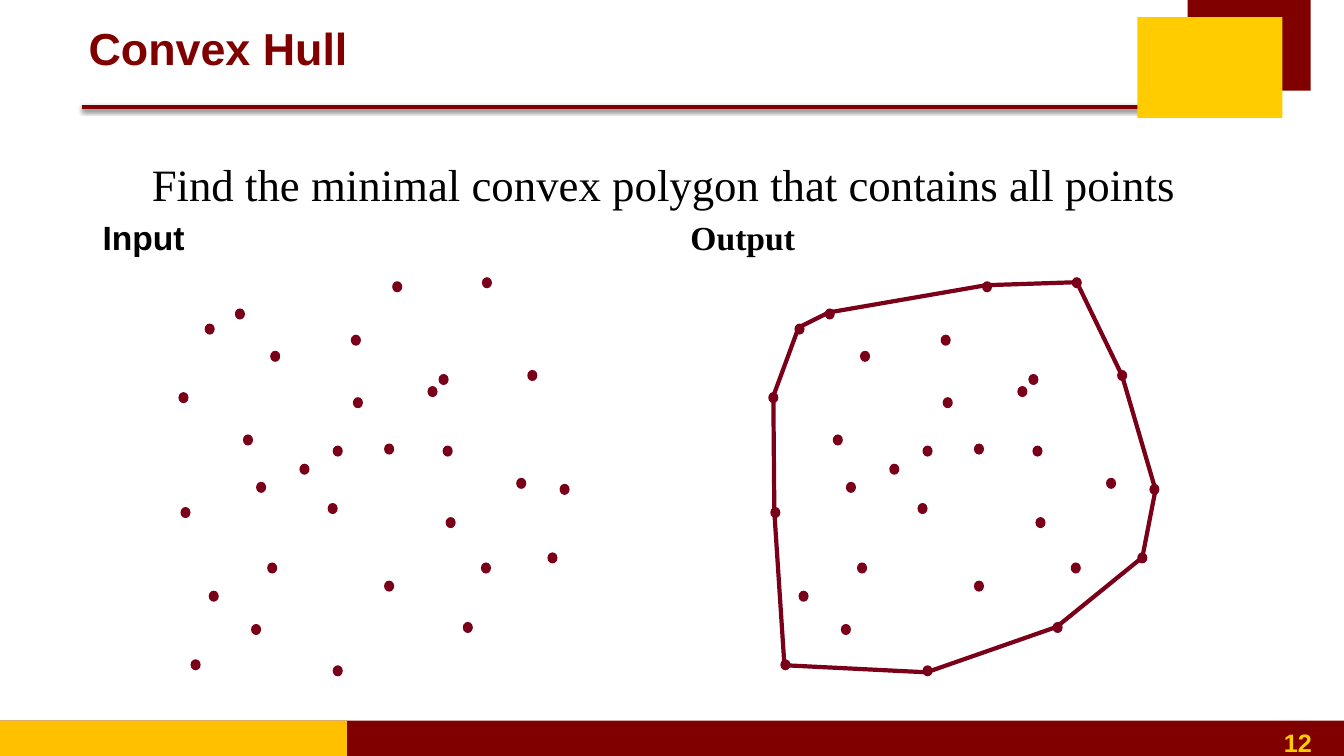
from lxml.etree import SubElement
from pptx import Presentation
from pptx.dml.color import RGBColor
from pptx.enum.shapes import MSO_CONNECTOR, MSO_SHAPE
from pptx.enum.text import MSO_ANCHOR, PP_ALIGN
from pptx.oxml.ns import qn
from pptx.util import Inches, Pt

MAROON, POINT, GOLD = "800000", "7A0019", "FFCC00"
rgb = RGBColor.from_string

prs = Presentation()
prs.slide_width, prs.slide_height = Inches(13.33), Inches(7.5)
s = prs.slides.add_slide(prs.slide_layouts[6])


def add_filled(kind, x, y, w, h, color):
    sp = s.shapes.add_shape(kind, Inches(x), Inches(y), Inches(w), Inches(h))
    sp.shadow.inherit = False
    sp.fill.solid()
    sp.fill.fore_color.rgb = rgb(color)
    sp.line.fill.background()


def add_text(text, x, y, w, h, size, font, color, bold=True,
             align=PP_ALIGN.LEFT, anchor=MSO_ANCHOR.TOP):
    tf = s.shapes.add_textbox(Inches(x), Inches(y), Inches(w), Inches(h)).text_frame
    tf.word_wrap = True
    tf.vertical_anchor = anchor
    p = tf.paragraphs[0]
    p.text = text
    p.alignment = align
    f = p.runs[0].font
    f.size, f.name, f.bold = Pt(size), font, bold
    f.color.rgb = rgb(color)


# Title rule: two stacked lines with a soft shadow below
for color in ("C00000", MAROON):
    rule = s.shapes.add_connector(MSO_CONNECTOR.STRAIGHT, Inches(0.81), Inches(1.06),
                                  Inches(11.37), Inches(1.06))
    rule.line.color.rgb = rgb(color)
    rule.line.width = Pt(3)
    effects = SubElement(rule._element.spPr, qn("a:effectLst"))
    shadow = SubElement(effects, qn("a:outerShdw"), blurRad=str(Pt(3.1)),
                        dist=str(Pt(1.8)), dir="5400000", rotWithShape="0")
    black = SubElement(shadow, qn("a:srgbClr"), val="000000")
    SubElement(black, qn("a:alpha"), val="35000")

# Footer band and corner blocks
for x, y, w, h, color in [
    (0, 7.15, 13.33, 0.35, MAROON),
    (0, 7.15, 3.44, 0.35, "FFC000"),
    (11.78, 0, 1.22, 0.9, MAROON),
    (11.28, 0.17, 1.44, 1, GOLD),
]:
    add_filled(MSO_SHAPE.RECTANGLE, x, y, w, h, color)

# Text
add_text("12", 10.33, 7.17, 2.78, 0.33, 18, "Arial", GOLD, align=PP_ALIGN.RIGHT)
add_text("Convex Hull", 0.78, 0.06, 10.22, 0.83, 32, "Arial", MAROON,
         anchor=MSO_ANCHOR.MIDDLE)
add_text("Find the minimal convex polygon that contains all points",
         0.92, 1.51, 11.33, 0.64, 32, "Times New Roman", "000000",
         bold=False, align=PP_ALIGN.CENTER)
add_text("Input", 0.92, 2.1, 5.64, 0.64, 24, "Arial", "000000")
add_text("Output", 6.75, 2.1, 5.67, 0.64, 24, "Times New Roman", "000000")

# Hull outline
hull = [(10.68, 2.8), (9.78, 2.83), (8.22, 3.1), (7.92, 3.25), (7.67, 3.93),
        (7.68, 5.08), (7.78, 6.6), (9.19, 6.67), (10.48, 6.22), (11.33, 5.53),
        (11.46, 4.86), (11.13, 3.73)]
corners = [(Inches(x), Inches(y)) for x, y in hull]
builder = s.shapes.build_freeform(*corners[0])
builder.add_line_segments(corners[1:], close=True)
outline = builder.convert_to_shape()
outline.shadow.inherit = False
outline.fill.background()
outline.line.color.rgb = rgb(POINT)
outline.line.width = Pt(3)

# The same point set on both sides: input, then output
points = [
    (4.78, 2.75), (3.89, 2.79), (2.33, 3.06), (2.03, 3.21), (1.77, 3.89),
    (2.68, 3.48), (3.48, 3.32), (5.23, 3.67), (4.35, 3.71), (4.24, 3.83),
    (3.5, 3.94), (3.81, 4.4), (4.39, 4.42), (5.12, 4.74), (5.55, 4.8),
    (4.42, 5.13), (3.25, 4.99), (2.97, 4.6), (3.3, 4.42), (2.41, 4.31),
    (2.54, 4.78), (1.79, 5.03), (2.07, 5.86), (1.89, 6.54), (2.49, 6.19),
    (2.65, 5.58), (3.81, 5.76), (4.77, 5.58), (4.59, 6.17), (3.3, 6.6),
    (5.43, 5.48),
]
for offset in (0, 5.85):
    for x, y in points:
        add_filled(MSO_SHAPE.OVAL, x + offset, y, 0.1, 0.11, POINT)

prs.save("out.pptx")
